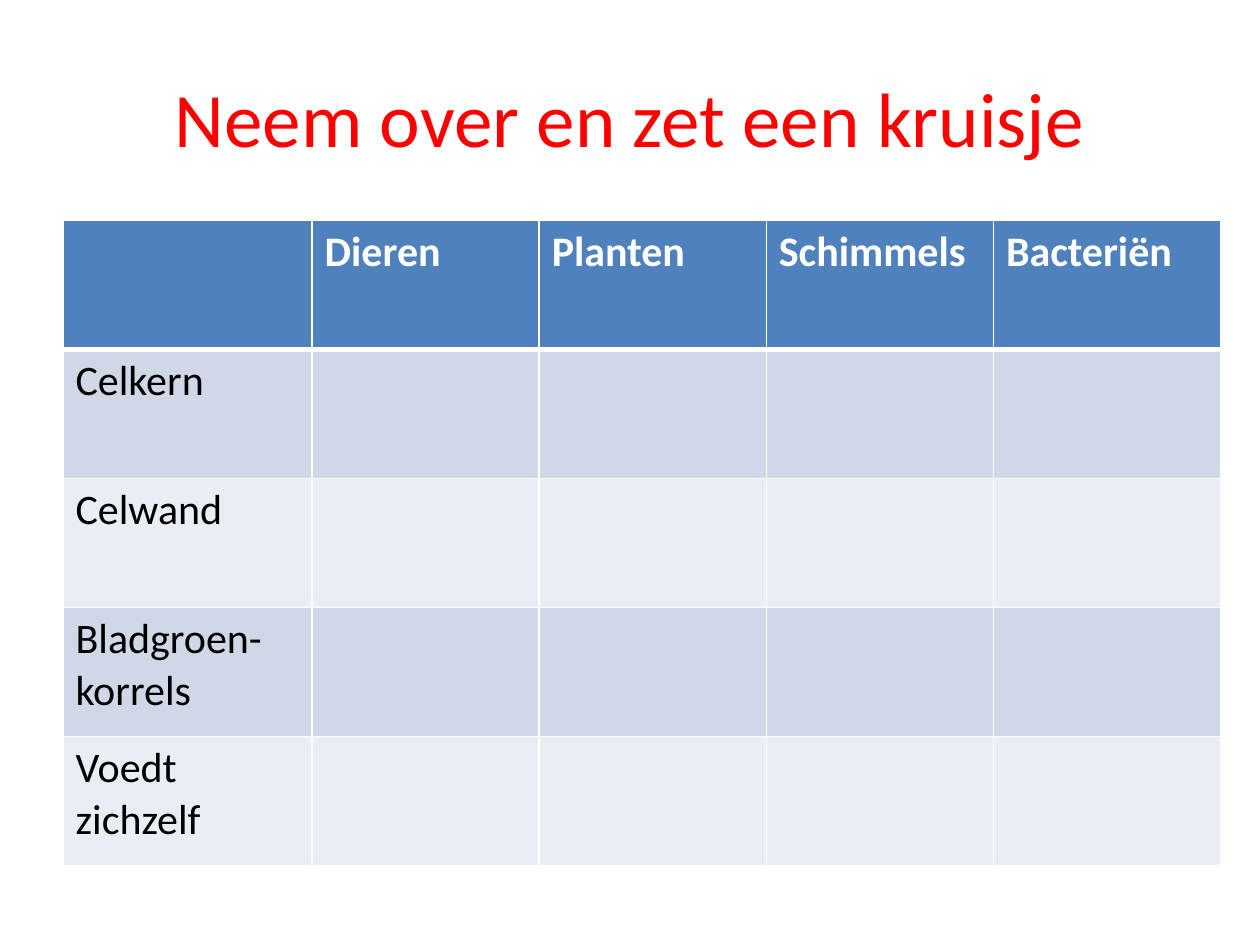
from dataclasses import dataclass

from lxml import etree
from pptx import Presentation
from pptx.dml.color import RGBColor
from pptx.enum import text
from pptx.oxml import ns
from pptx.util import Pt


@dataclass(frozen=True)
class Theme:
    font: str = "Calibri"
    title_size: int = 44
    cell_size: int = 24
    title: str = "FF0000"
    header: str = "4F81BD"
    header_text: str = "FFFFFF"
    body_text: str = "000000"
    bands: tuple = ("D0D8E8", "E9EDF4")
    border: str = "FFFFFF"
    thin: int = 1
    thick: int = 3


THEME = Theme()
KINGDOMS = ["Dieren", "Planten", "Schimmels", "Bacteriën"]
TRAITS = ["Celkern", "Celwand", "Bladgroen-korrels", "Voedt zichzelf"]
LABEL_WIDTH, COLUMN_WIDTH, ROW_HEIGHT = 142.3, 129.8, 73.75


def style_text(p, size, color, bold=False):
    for r in p.runs:
        r.font.name = THEME.font
        r.font.size = Pt(size)
        r.font.bold = bold
        r.font.color.rgb = RGBColor.from_string(color)


def add_title(s, title):
    sp = s.shapes.add_textbox(Pt(36), Pt(21.6), Pt(648), Pt(90))
    tf = sp.text_frame
    tf.word_wrap = True
    tf.vertical_anchor = text.MSO_ANCHOR.MIDDLE
    p = tf.paragraphs[0]
    p.text = title
    p.alignment = text.PP_ALIGN.CENTER
    style_text(p, THEME.title_size, THEME.title)


def set_borders(cell, **widths):
    """Draw the four edges; these elements must come before the cell fill."""
    tc_pr = cell._tc.get_or_add_tcPr()
    for side in "LRTB":
        width = widths.get(side, THEME.thin)
        ln = etree.SubElement(tc_pr, ns.qn(f"a:ln{side}"), w=str(Pt(width)))
        fill = etree.SubElement(ln, ns.qn("a:solidFill"))
        etree.SubElement(fill, ns.qn("a:srgbClr"), val=THEME.border)


def style_cell(cell, row):
    is_header = row == 0
    if is_header:
        set_borders(cell, B=THEME.thick)
    elif row == 1:
        set_borders(cell, T=THEME.thick)
    else:
        set_borders(cell)
    cell.fill.solid()
    color = THEME.header if is_header else THEME.bands[(row - 1) % 2]
    cell.fill.fore_color.rgb = RGBColor.from_string(color)
    style_text(cell.text_frame.paragraphs[0], THEME.cell_size,
               THEME.header_text if is_header else THEME.body_text, is_header)


def add_trait_table(s):
    rows, cols = len(TRAITS) + 1, len(KINGDOMS) + 1
    width = LABEL_WIDTH + COLUMN_WIDTH * len(KINGDOMS)
    table = s.shapes.add_table(rows, cols, Pt(36), Pt(126), Pt(width),
                               Pt(ROW_HEIGHT * rows)).table

    # Grid sizes
    for i, column in enumerate(table.columns):
        column.width = Pt(COLUMN_WIDTH if i else LABEL_WIDTH)
    for row in table.rows:
        row.height = Pt(ROW_HEIGHT)

    # Headings and row labels
    for i, kingdom in enumerate(KINGDOMS, 1):
        table.cell(0, i).text_frame.text = kingdom
    for i, trait in enumerate(TRAITS, 1):
        table.cell(i, 0).text_frame.text = trait

    # Colours and borders
    for i, row in enumerate(table.rows):
        for cell in row.cells:
            style_cell(cell, i)


def main():
    prs = Presentation()
    prs.slide_width, prs.slide_height = Pt(720), Pt(540)
    s = prs.slides.add_slide(prs.slide_layouts[6])
    add_title(s, "Neem over en zet een kruisje")
    add_trait_table(s)
    prs.save("out.pptx")


if __name__ == "__main__":
    main()
